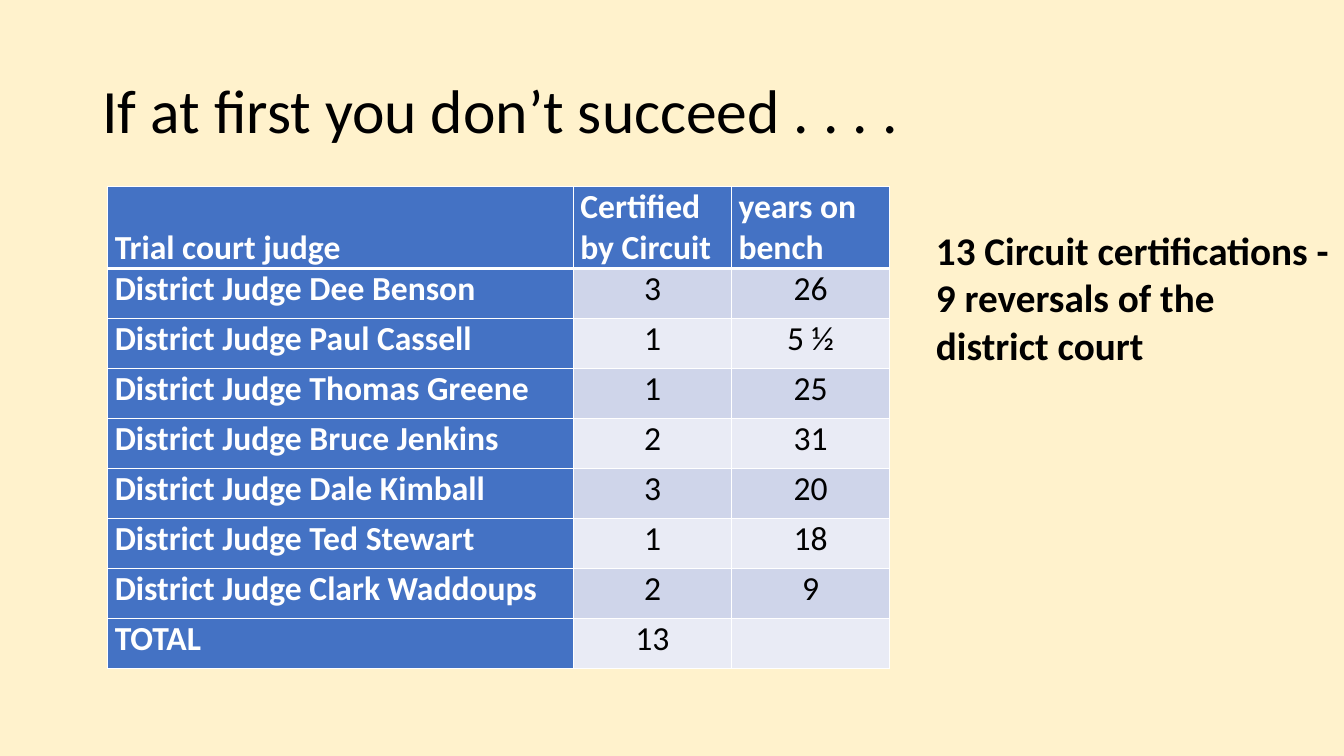
import dataclasses

import lxml.etree
import pptx
import pptx.dml.color
import pptx.enum.text
import pptx.oxml.ns
import pptx.util

ANCHOR = pptx.enum.text.MSO_ANCHOR
ALIGN = pptx.enum.text.PP_ALIGN


@dataclasses.dataclass(frozen=True)
class Theme:
    font: str = "Calibri"
    background: str = "FFF2CC"
    text: str = "000000"
    light: str = "FFFFFF"
    accent: str = "4472C4"
    bands: tuple = ("CFD5EA", "E9EBF5")
    title_size: int = 44
    note_size: int = 28
    table_size: int = 24


def rgb(value):
    return pptx.dml.color.RGBColor.from_string(value)


def points(*values):
    return [pptx.util.Pt(value) for value in values]


def write_text(frame, text, *, font, size, color, bold=False, align=ALIGN.LEFT, spacing=1.0):
    paragraph = frame.paragraphs[0]
    paragraph.alignment = align
    paragraph.line_spacing = spacing
    paragraph.font.size = pptx.util.Pt(size)
    if not text:
        return
    run = paragraph.add_run()
    run.text = text
    run.font.name = font
    run.font.size = pptx.util.Pt(size)
    run.font.bold = bold
    run.font.color.rgb = rgb(color)


class SlideBuilder:
    """Adds styled elements to one slide, with lengths in points."""

    def __init__(self, slide, theme):
        self.slide = slide
        self.theme = theme
        slide.background.fill.solid()
        slide.background.fill.fore_color.rgb = rgb(theme.background)

    def title(self, text, left, top, width, height):
        shape = self.slide.shapes.title
        shape.left, shape.top, shape.width, shape.height = points(left, top, width, height)
        frame = shape.text_frame
        frame.auto_size = pptx.enum.text.MSO_AUTO_SIZE.NONE
        frame.vertical_anchor = ANCHOR.MIDDLE
        write_text(frame, text, font=self.theme.font, size=self.theme.title_size,
                   color=self.theme.text, spacing=0.9)

    def note(self, text, left, top, width, height):
        shape = self.slide.shapes.add_textbox(*points(left, top, width, height))
        shape.text_frame.word_wrap = True
        write_text(shape.text_frame, text, font=self.theme.font,
                   size=self.theme.note_size, color=self.theme.text, bold=True)

    def table(self, rows, left, top, column_widths, row_heights):
        shape = self.slide.shapes.add_table(
            len(rows), len(column_widths),
            *points(left, top, sum(column_widths), sum(row_heights)))
        table = shape.table
        for column, width in zip(table.columns, column_widths):
            column.width = pptx.util.Pt(width)
        for row, height in zip(table.rows, row_heights):
            row.height = pptx.util.Pt(height)
        for row_index, values in enumerate(rows):
            for column_index, value in enumerate(values):
                self.cell(table.cell(row_index, column_index), value, row_index, column_index)

    def cell(self, cell, text, row_index, column_index):
        theme = self.theme
        is_header = row_index == 0
        is_heading = is_header or column_index == 0
        cell.margin_left = cell.margin_right = pptx.util.Pt(5)
        cell.margin_top = cell.margin_bottom = 0
        cell.vertical_anchor = ANCHOR.BOTTOM if is_header else ANCHOR.TOP
        write_text(cell.text_frame, text, font=theme.font, size=theme.table_size,
                   color=theme.light if is_heading else theme.text, bold=is_heading,
                   align=ALIGN.LEFT if is_heading else ALIGN.CENTER)
        self.borders(cell, top=3 if row_index == 1 else 1, bottom=3 if is_header else 1)
        cell.fill.solid()
        cell.fill.fore_color.rgb = rgb(
            theme.accent if is_heading else theme.bands[(row_index - 1) % 2])

    def borders(self, cell, top, bottom):
        qualified = pptx.oxml.ns.qn
        properties = cell._tc.get_or_add_tcPr()
        for side, width in (("L", 1), ("R", 1), ("T", top), ("B", bottom)):
            line = lxml.etree.SubElement(
                properties, qualified(f"a:ln{side}"), w=str(pptx.util.Pt(width)))
            fill = lxml.etree.SubElement(line, qualified("a:solidFill"))
            lxml.etree.SubElement(fill, qualified("a:srgbClr"), val=self.theme.light)


JUDGES = [
    ("Dee Benson", "3", "26"),
    ("Paul Cassell", "1", "5 ½"),
    ("Thomas Greene", "1", "25"),
    ("Bruce Jenkins", "2", "31"),
    ("Dale Kimball", "3", "20"),
    ("Ted Stewart", "1", "18"),
    ("Clark Waddoups", "2", "9"),
]


def main():
    presentation = pptx.Presentation()
    presentation.slide_width, presentation.slide_height = points(960, 540)
    title_only = presentation.slide_layouts.get_by_name("Title Only")
    builder = SlideBuilder(presentation.slides.add_slide(title_only), Theme())
    builder.title("If at first you don’t succeed . . . .", 66, 28.75, 828, 104.4)
    rows = [
        ("Trial court judge", "Certified by Circuit", "years on bench"),
        *((f"District Judge {name}", certified, years) for name, certified, years in JUDGES),
        ("TOTAL", "13", ""),
    ]
    builder.table(rows, 77, 133.2, [332.6, 113, 113], [58] + [35.75] * (len(rows) - 1))
    builder.note("13 Circuit certifications - 9 reversals of the district court",
                 661.5, 158.4, 298.5, 109)
    presentation.save("out.pptx")


if __name__ == "__main__":
    main()
